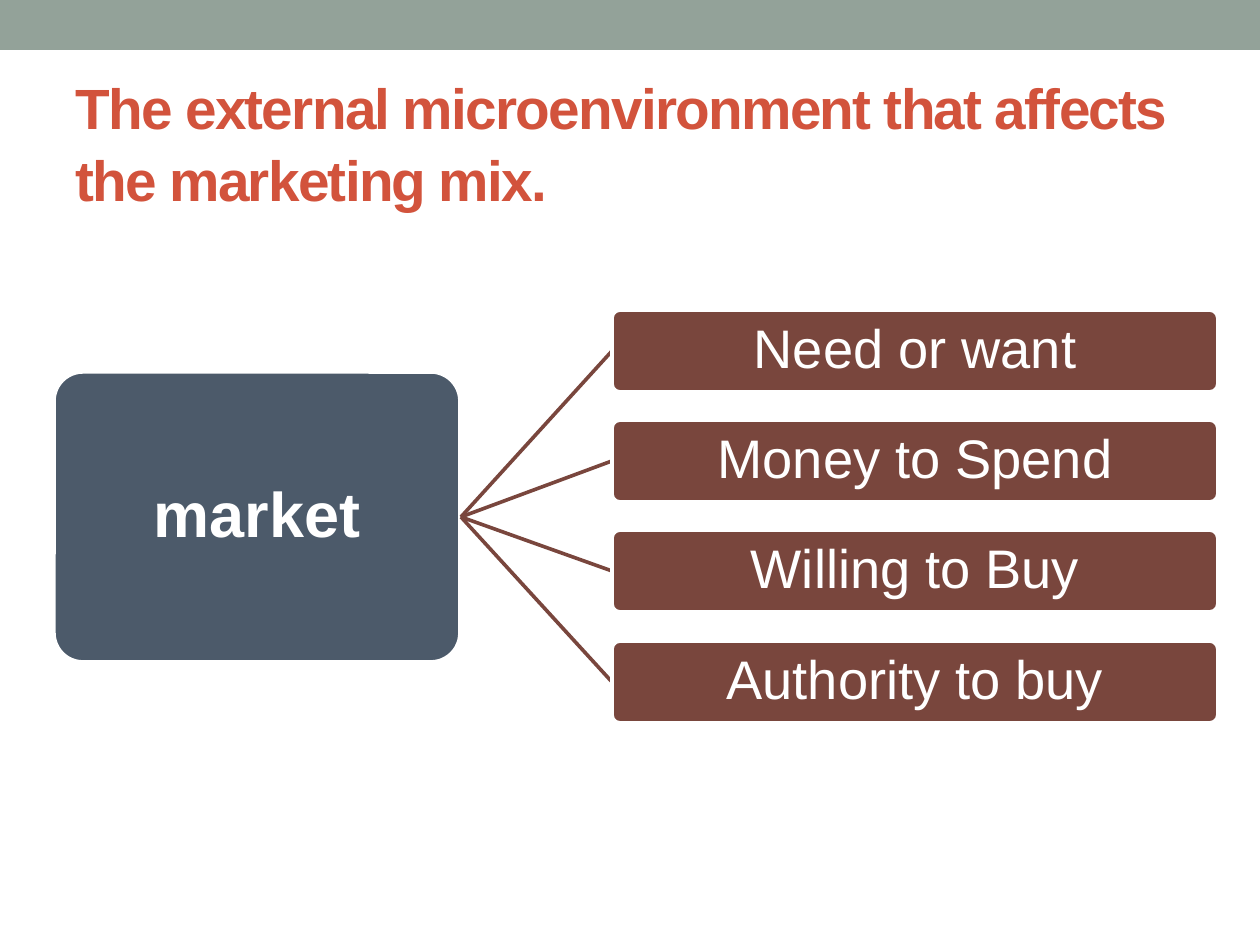
"""Build a slide linking a market to its four requirements."""
import pptx
import pptx.dml.color
import pptx.enum.shapes
import pptx.enum.text
import pptx.oxml
import pptx.util

EMU_PER_PX = 914400 // 126
FONT = "Arial"
LINE_WIDTH = 2.08
WHITE = pptx.dml.color.RGBColor(0xFF, 0xFF, 0xFF)
SAGE = pptx.dml.color.RGBColor(0x93, 0xA2, 0x99)
RED = pptx.dml.color.RGBColor(0xD2, 0x53, 0x3C)
SLATE = pptx.dml.color.RGBColor(0x4C, 0x5A, 0x6A)
BROWN = pptx.dml.color.RGBColor(0x79, 0x46, 0x3D)

TITLE = "The external microenvironment that affects the marketing mix."
REQUIREMENTS = ["Need or want", "Money to Spend", "Willing to Buy", "Authority to buy"]
MARKET_BOX = (54, 372, 406, 290)
BOX_LEFT, BOX_WIDTH, BOX_HEIGHT = 612, 606, 82
FIRST_TOP, LAST_TOP = 310, 641


def px(*lengths):
    """Turn pixel lengths into EMU."""
    return [pptx.util.Emu(length * EMU_PER_PX) for length in lengths]


def format_text(paragraph, size, color, bold, alignment, spacing):
    """Apply font, alignment and line spacing to a paragraph."""
    paragraph.alignment = alignment
    paragraph.line_spacing = spacing
    for run in paragraph.runs:
        run.font.name = FONT
        run.font.size = pptx.util.Pt(size)
        run.font.bold = bold
        run.font.color.rgb = color


def add_band(slide):
    """Add the plain band along the top edge."""
    shape = slide.shapes.add_shape(
        pptx.enum.shapes.MSO_SHAPE.RECTANGLE, *px(0, 0, 1260, 50))
    shape.shadow.inherit = False
    shape.fill.solid()
    shape.fill.fore_color.rgb = SAGE
    shape.line.fill.background()


def set_title(slide, text):
    """Place and format the title placeholder."""
    title = slide.shapes.title
    title.left, title.top, title.width, title.height = px(63, 73, 1134, 136)
    frame = title.text_frame
    frame.text = text
    frame.word_wrap = True
    frame.auto_size = pptx.enum.text.MSO_AUTO_SIZE.NONE
    frame.vertical_anchor = pptx.enum.text.MSO_ANCHOR.MIDDLE
    paragraph = frame.paragraphs[0]
    format_text(paragraph, 32.4, RED, True, pptx.enum.text.PP_ALIGN.LEFT, 1.05)
    paragraph.runs[0].font._element.set("spc", "-100")


def add_box(slide, text, bounds, fill, size, bold=False):
    """Add a rounded box with centred white text."""
    shape = slide.shapes.add_shape(
        pptx.enum.shapes.MSO_SHAPE.ROUNDED_RECTANGLE, *px(*bounds))
    shape.adjustments[0] = 0.1
    shape.shadow.inherit = False
    shape.fill.solid()
    shape.fill.fore_color.rgb = fill
    shape.line.color.rgb = WHITE
    shape.line.width = pptx.util.Pt(LINE_WIDTH)
    frame = shape.text_frame
    frame.text = text
    frame.word_wrap = True
    frame.vertical_anchor = pptx.enum.text.MSO_ANCHOR.MIDDLE
    frame.margin_left = frame.margin_right = px(3)[0]
    frame.margin_top = frame.margin_bottom = px(3)[0]
    format_text(frame.paragraphs[0], size, WHITE, bold,
                pptx.enum.text.PP_ALIGN.CENTER, 0.9)


def add_link(slide, start, end):
    """Add a straight line between two points."""
    connector = slide.shapes.add_connector(
        pptx.enum.shapes.MSO_CONNECTOR.STRAIGHT, *px(*start, *end))
    connector.line.color.rgb = BROWN
    connector.line.width = pptx.util.Pt(LINE_WIDTH)
    properties = connector._element.spPr
    properties.append(pptx.oxml.parse_xml(
        '<a:effectLst xmlns:a="http://schemas.openxmlformats.org/drawingml/2006/main"/>'))


def main():
    """Create and save the slide."""
    presentation = pptx.Presentation()
    presentation.slide_width, presentation.slide_height = px(1260, 945)
    slide = presentation.slides.add_slide(presentation.slide_layouts[5])
    add_band(slide)
    set_title(slide, TITLE)
    add_box(slide, "market", MARKET_BOX, SLATE, 36, bold=True)
    left, top, width, height = MARKET_BOX
    hub = (left + width + 1, top + height // 2)
    for index, text in enumerate(REQUIREMENTS):
        box_top = FIRST_TOP + index * (LAST_TOP - FIRST_TOP) // (len(REQUIREMENTS) - 1)
        add_link(slide, hub, (BOX_LEFT, box_top + BOX_HEIGHT // 2))
        add_box(slide, text, (BOX_LEFT, box_top, BOX_WIDTH, BOX_HEIGHT), BROWN, 31)
    presentation.save("out.pptx")


if __name__ == "__main__":
    main()
